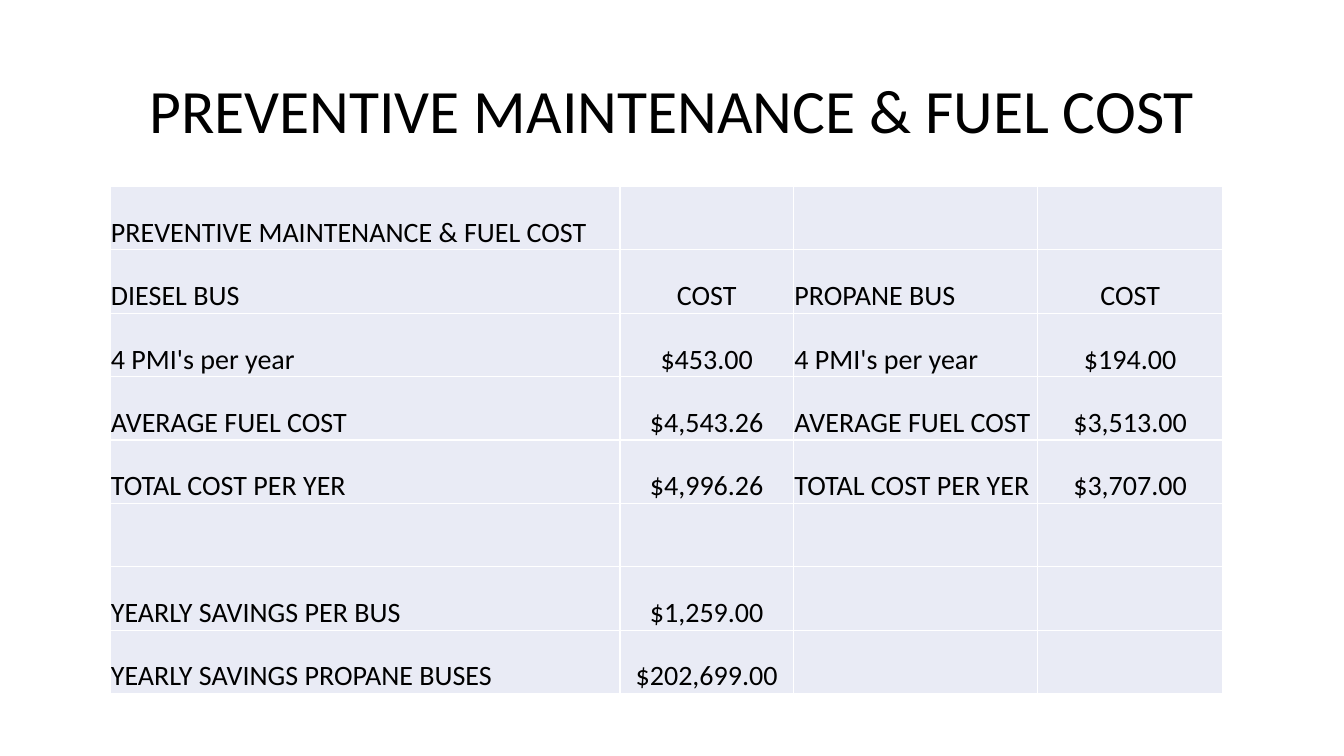
from lxml import etree
from pptx import Presentation
from pptx.dml.color import RGBColor
from pptx.enum.text import MSO_ANCHOR, PP_ALIGN
from pptx.oxml.ns import qn
from pptx.util import Inches, Pt

TITLE = "PREVENTIVE MAINTENANCE & FUEL COST"
COST_ROWS = [
    (TITLE, "", "", ""),
    ("DIESEL BUS", "COST", "PROPANE BUS", "COST"),
    ("4 PMI's per year", "$453.00", "4 PMI's per year", "$194.00"),
    ("AVERAGE FUEL COST", "$4,543.26", "AVERAGE FUEL COST", "$3,513.00"),
    ("TOTAL COST PER YER", "$4,996.26", "TOTAL COST PER YER", "$3,707.00"),
    ("", "", "", ""),
    ("YEARLY SAVINGS PER BUS", "$1,259.00", "", ""),
    ("YEARLY SAVINGS PROPANE BUSES", "$202,699.00", "", ""),
]
COLUMN_WIDTHS = (5.06, 1.72, 2.42, 1.84)
COLUMN_ALIGNS = (PP_ALIGN.LEFT, PP_ALIGN.CENTER) * 2
TABLE_LEFT, TABLE_TOP, TABLE_HEIGHT = 1.09, 1.85, 5.03

FONT = "Calibri"
BLACK = RGBColor(0x00, 0x00, 0x00)
WHITE = RGBColor(0xFF, 0xFF, 0xFF)
PALE_BLUE = RGBColor(0xE9, 0xEB, 0xF5)
MIDDLE, BOTTOM = MSO_ANCHOR.MIDDLE, MSO_ANCHOR.BOTTOM


def write(paragraph, text, size, align):
    paragraph.alignment = align
    run = paragraph.add_run()
    run.text = text
    run.font.name = FONT
    run.font.size = Pt(size)
    run.font.color.rgb = BLACK


def add_borders(cell):
    properties = cell._tc.get_or_add_tcPr()
    for side in ("a:lnL", "a:lnR", "a:lnT", "a:lnB"):
        border = etree.SubElement(properties, qn(side), w=str(Pt(1)))
        fill = etree.SubElement(border, qn("a:solidFill"))
        etree.SubElement(fill, qn("a:srgbClr"), val=str(WHITE))


def add_title(slide):
    box = slide.shapes.add_textbox(Inches(0.92), Inches(0.4), Inches(11.5), Inches(1.45))
    frame = box.text_frame
    frame.word_wrap = True
    frame.vertical_anchor = MIDDLE
    heading = frame.paragraphs[0]
    heading.line_spacing = 0.9
    write(heading, TITLE, 44, PP_ALIGN.CENTER)


def add_cost_table(slide):
    table = slide.shapes.add_table(
        len(COST_ROWS), len(COLUMN_WIDTHS), Inches(TABLE_LEFT), Inches(TABLE_TOP),
        Inches(sum(COLUMN_WIDTHS)), Inches(TABLE_HEIGHT)).table
    table.first_row = False
    table.horz_banding = False
    for column, width in zip(table.columns, COLUMN_WIDTHS):
        column.width = Inches(width)
    for row, entries in zip(table.rows, COST_ROWS):
        for cell, entry, align in zip(row.cells, entries, COLUMN_ALIGNS):
            add_borders(cell)
            cell.fill.solid()
            cell.fill.fore_color.rgb = PALE_BLUE
            if entry:
                cell.vertical_anchor = BOTTOM
                cell.margin_left = cell.margin_right = cell.margin_top = Inches(0.01)
                cell.margin_bottom = 0
                write(cell.text_frame.paragraphs[0], entry, 20, align)


def main():
    deck = Presentation()
    deck.slide_width, deck.slide_height = Inches(13.33), Inches(7.5)
    slide = deck.slides.add_slide(deck.slide_layouts[6])
    add_title(slide)
    add_cost_table(slide)
    deck.save("out.pptx")


if __name__ == "__main__":
    main()
